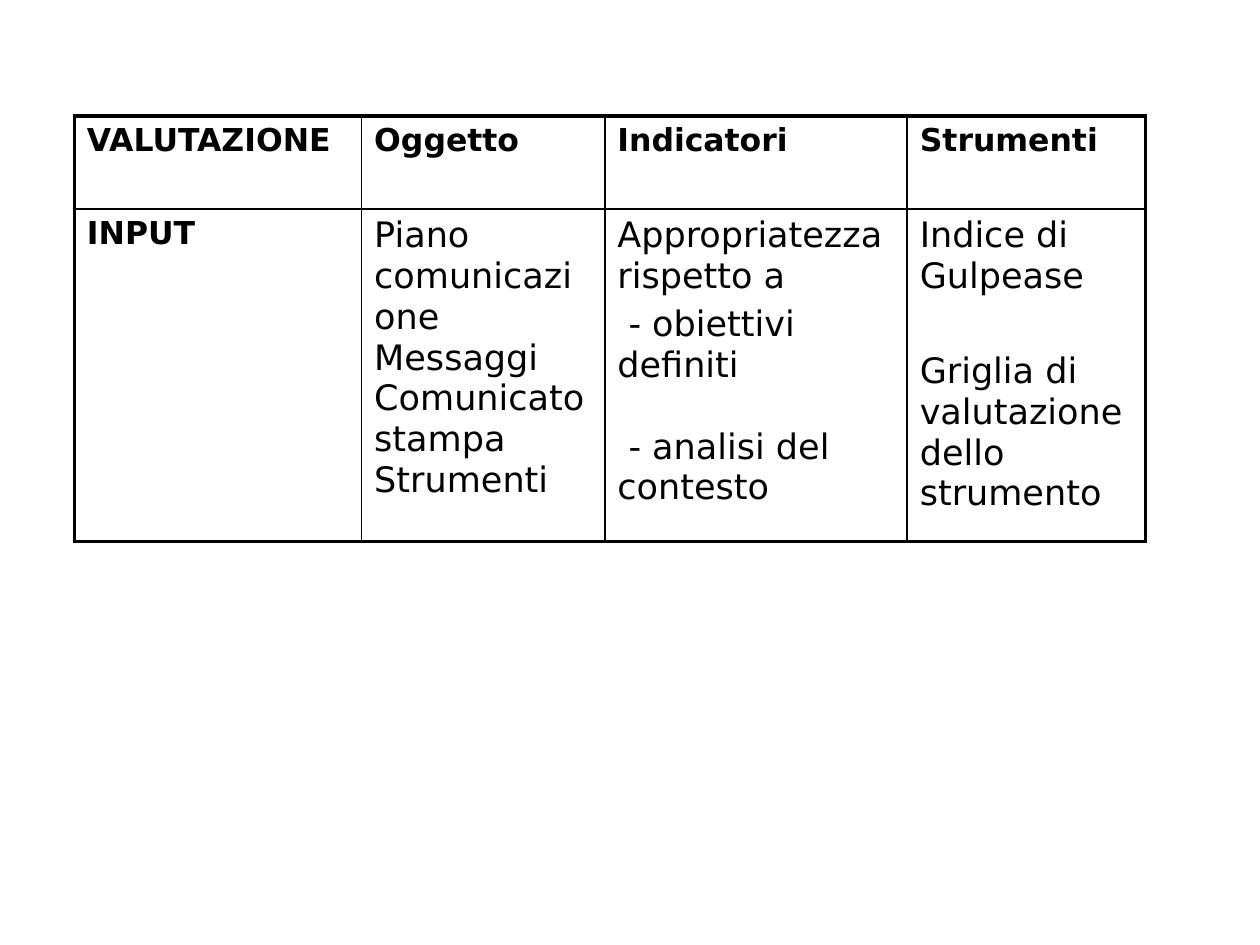
from lxml.etree import SubElement
from pptx import Presentation
from pptx.dml.color import RGBColor
from pptx.oxml.ns import qn
from pptx.util import Inches, Pt

BLACK = RGBColor(0, 0, 0)
FONT = "DejaVu Sans"
THIN, THICK = 1, 2.25
HEADING_SIZE, BODY_SIZE = 18, 20
PARAGRAPH_GAP, LINE_GAP, WIDE_GAP = 4, 23.5, 31

COLUMN_WIDTHS = [2.28, 1.93, 2.4, 1.89]
ROW_HEIGHTS = [0.74, 2.64]
HEADINGS = ["VALUTAZIONE", "Oggetto", "Indicatori", "Strumenti"]
INPUT_DETAILS = [
    [("Piano comunicazione", 0), ("Messaggi", 0),
     ("Comunicato stampa", 0), ("Strumenti", 0)],
    [("Appropriatezza rispetto a", 0), (" - obiettivi definiti", PARAGRAPH_GAP),
     (" - analisi del contesto", LINE_GAP)],
    [("Indice di Gulpease", 0),
     ("Griglia di valutazione dello strumento", WIDE_GAP)],
]


def write_cell(cell, lines, size, bold):
    frame = cell.text_frame
    frame.word_wrap = True
    for index, (text, gap) in enumerate(lines):
        paragraph = frame.paragraphs[0] if index == 0 else frame.add_paragraph()
        paragraph.space_before = Pt(gap)
        run = paragraph.add_run()
        run.text = text
        run.font.name = FONT
        run.font.size = Pt(size)
        run.font.bold = bold
        run.font.color.rgb = BLACK


def draw_borders(cell, on_outer_edge):
    properties = cell._tc.get_or_add_tcPr()
    for side, outer in on_outer_edge.items():
        width = Pt(THICK if outer else THIN)
        line = SubElement(properties, qn(f"a:ln{side}"), w=str(int(width)))
        fill = SubElement(line, qn("a:solidFill"))
        SubElement(fill, qn("a:srgbClr"), val=str(BLACK))


def add_evaluation_table(slide):
    rows, columns = len(ROW_HEIGHTS), len(COLUMN_WIDTHS)
    table = slide.shapes.add_table(
        rows, columns, Inches(0.59), Inches(0.92),
        Inches(sum(COLUMN_WIDTHS)), Inches(sum(ROW_HEIGHTS))).table
    table.first_row = False
    table.horz_banding = False
    for column, width in zip(table.columns, COLUMN_WIDTHS):
        column.width = Inches(width)
    for row, height in zip(table.rows, ROW_HEIGHTS):
        row.height = Inches(height)

    for column, heading in enumerate(HEADINGS):
        write_cell(table.cell(0, column), [(heading, 0)], HEADING_SIZE, True)
    write_cell(table.cell(1, 0), [("INPUT", 0)], HEADING_SIZE, True)
    for column, lines in enumerate(INPUT_DETAILS, start=1):
        write_cell(table.cell(1, column), lines, BODY_SIZE, False)

    for row in range(rows):
        for column in range(columns):
            cell = table.cell(row, column)
            draw_borders(cell, {
                "L": column == 0, "R": column == columns - 1,
                "T": row == 0, "B": row == rows - 1})
            cell.fill.background()


def main():
    presentation = Presentation()
    presentation.slide_width = Inches(10)
    presentation.slide_height = Inches(7.5)
    slide = presentation.slides.add_slide(presentation.slide_layouts[6])
    add_evaluation_table(slide)
    presentation.save("out.pptx")


if __name__ == "__main__":
    main()
